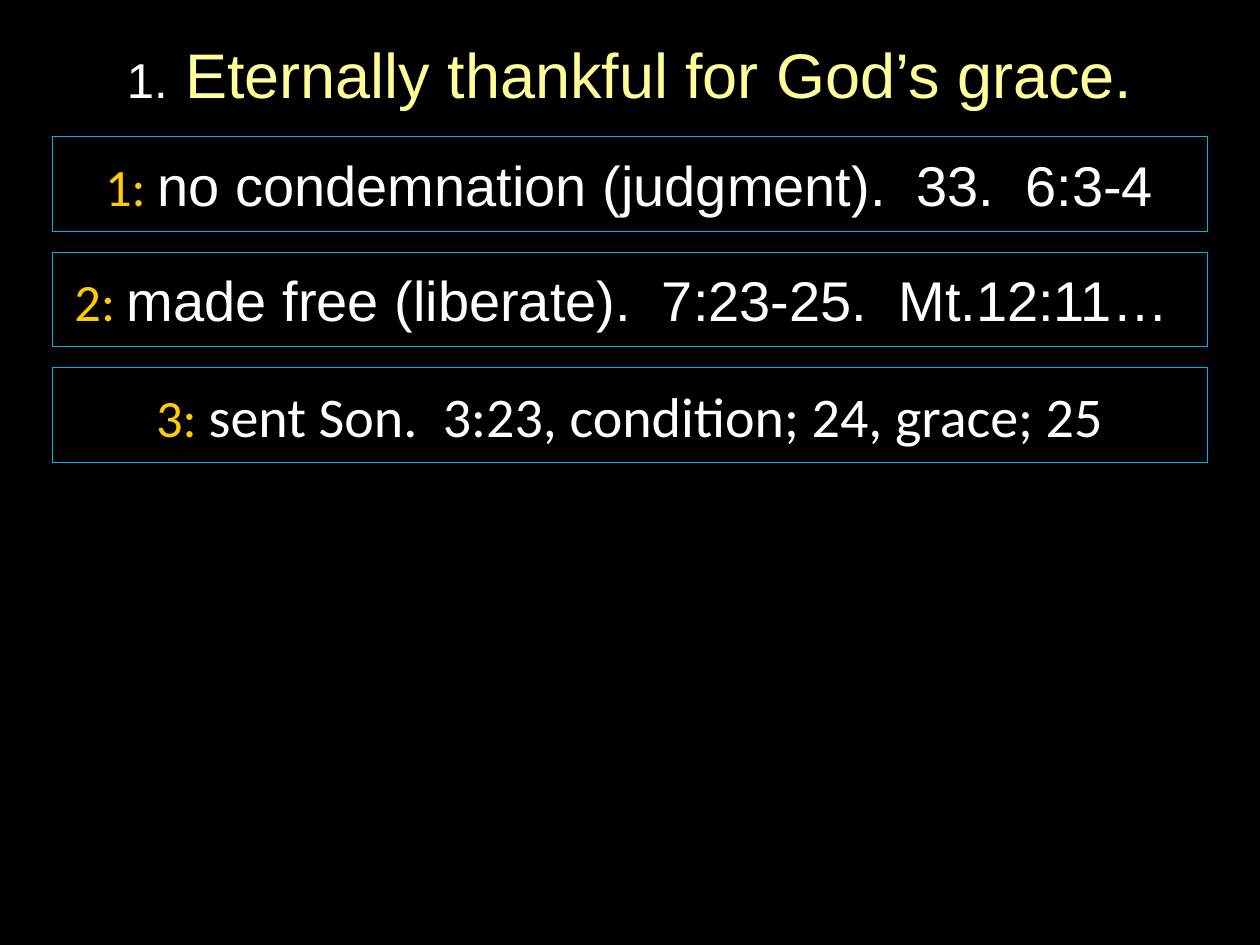
from pptx import Presentation
from pptx.dml.color import RGBColor
from pptx.enum.shapes import MSO_SHAPE
from pptx.enum.text import MSO_ANCHOR, PP_ALIGN
from pptx.util import Pt

BLACK = RGBColor(0x00, 0x00, 0x00)
WHITE = RGBColor(0xFF, 0xFF, 0xFF)
CREAM = RGBColor(0xFF, 0xFF, 0x99)
GOLD = RGBColor(0xFF, 0xCC, 0x00)
BLUE = RGBColor(0x00, 0xB0, 0xF0)

LEFT, TOP, WIDTH, HEIGHT, STEP = 30, 78, 660, 54, 66

VERSES = [
    ("1: ", "no condemnation (judgment).  33.  6:3-4", "Arial"),
    ("2: ", "made free (liberate).  7:23-25.  Mt.12:11… ", "Arial"),
    ("3: ", "sent Son.  3:23, condition; 24, grace; 25", "Calibri"),
]


def write(para, text, size, color, font="Arial"):
    run = para.add_run()
    run.text = text
    run.font.size = Pt(size)
    run.font.name = font
    run.font.color.rgb = color


class Deck:
    """Holds the style and the current slide."""

    def __init__(self, wide, high):
        self.file = Presentation()
        self.file.slide_width = Pt(wide)
        self.file.slide_height = Pt(high)
        self.slide = self.file.slides.add_slide(self.file.slide_layouts[5])
        fill = self.slide.background.fill
        fill.solid()
        fill.fore_color.rgb = BLACK

    def center(self, shape):
        """Center the text of a shape and return its first paragraph."""
        frame = shape.text_frame
        frame.word_wrap = True
        frame.vertical_anchor = MSO_ANCHOR.MIDDLE
        para = frame.paragraphs[0]
        para.alignment = PP_ALIGN.CENTER
        return para

    def title(self, mark, text):
        shape = self.slide.shapes.title
        shape.left, shape.top = Pt(36), Pt(0)
        shape.width, shape.height = Pt(648), Pt(84)
        para = self.center(shape)
        write(para, mark, 28, WHITE)
        write(para, text, 36, CREAM)

    def verse(self, top, mark, text, font):
        box = self.slide.shapes.add_shape(
            MSO_SHAPE.RECTANGLE, Pt(LEFT), Pt(top), Pt(WIDTH), Pt(HEIGHT))
        box.shadow.inherit = False
        box.fill.solid()
        box.fill.fore_color.rgb = BLACK
        box.line.color.rgb = BLUE
        box.line.width = Pt(0.25)
        para = self.center(box)
        write(para, mark, 30, GOLD, font="Calibri")
        write(para, text, 32, WHITE, font=font)


def main():
    deck = Deck(720, 540)
    deck.title("1.", " Eternally thankful for God’s grace.")
    for row, verse in enumerate(VERSES):
        deck.verse(TOP + row * STEP, *verse)
    deck.file.save("out.pptx")


if __name__ == "__main__":
    main()
